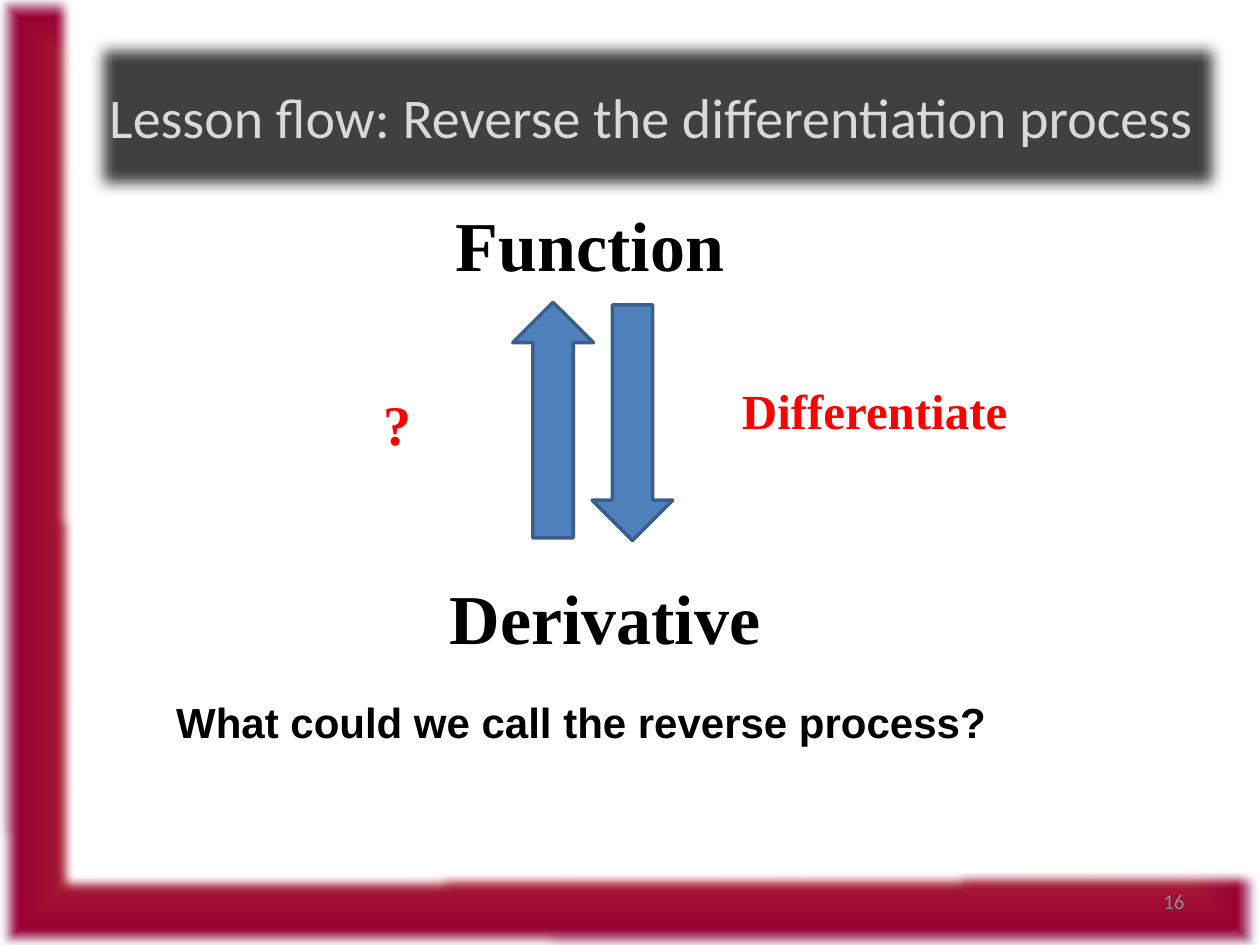
from dataclasses import dataclass

import pptx
import pptx.dml.color
import pptx.enum.shapes
import pptx.enum.text
import pptx.oxml
import pptx.oxml.ns
import pptx.util
from pptx.util import Inches, Pt

MSO_SHAPE = pptx.enum.shapes.MSO_SHAPE
ALIGN = pptx.enum.text.PP_ALIGN
ANCHOR = pptx.enum.text.MSO_ANCHOR
AUTO_SIZE = pptx.enum.text.MSO_AUTO_SIZE
NS = pptx.oxml.ns.nsdecls("a")
SERIF = "Times New Roman"


@dataclass
class Label:
    text: str
    left: float
    top: float
    width: float
    height: float
    size: float
    font: str = SERIF
    color: str = "000000"
    bold: bool = True
    align: ALIGN = ALIGN.LEFT
    inset: float = 0.1


@dataclass
class Arrow:
    kind: MSO_SHAPE
    left: float
    top: float


LABELS = [
    Label("16", 7.17, 6.95, 2.33, 0.4, 12, "Calibri", "8C8C8C", False, ALIGN.RIGHT),
    Label("Function", 3.52, 1.55, 2.37, 0.77, 40),
    Label("Derivative", 3.47, 4.51, 3.09, 0.77, 40),
    Label("Differentiate", 5.79, 2.97, 3.05, 0.57, 28, color="FF0000"),
    Label("What could we call the reverse process?", 1.3, 5.48, 8.27, 0.5, 24, "Arial"),
    Label("?", 2.56, 3.04, 0.98, 0.64, 32, color="FF0000", inset=0.48),
]
ARROWS = [
    Arrow(MSO_SHAPE.DOWN_ARROW, 4.7, 2.42),
    Arrow(MSO_SHAPE.UP_ARROW, 4.07, 2.4),
]
FRAME = [(-0.03, -0.04), (0.57, -0.04), (0.59, 6.96),
         (10.01, 6.92), (10.01, 7.56), (-0.01, 7.53)]
FRAME_STOPS = [(19, "FDCC33"), (95, "990033"), (100, "E1E8F5")]


def rgb(color: str) -> pptx.dml.color.RGBColor:
    return pptx.dml.color.RGBColor.from_string(color)


def style(p, size: float, font: str, color: str, bold: bool, align: ALIGN) -> None:
    p.alignment = align
    p.font.size = Pt(size)
    p.font.name = font
    p.font.bold = bold
    p.font.color.rgb = rgb(color)


def soften_edges(sp, radius: float) -> None:
    """Replace the shape's effects with a soft edge of the given radius in inches."""
    spPr = sp._element.spPr
    for old in spPr.findall(pptx.oxml.ns.qn("a:effectLst")):
        spPr.remove(old)
    spPr.append(pptx.oxml.parse_xml(
        f'<a:effectLst {NS}><a:softEdge rad="{Inches(radius)}"/></a:effectLst>'))


def add_frame(slide) -> None:
    """Draw the L-shaped border along the left and bottom, behind everything."""
    start, *rest = [(Inches(x), Inches(y)) for x, y in FRAME]
    builder = slide.shapes.build_freeform(*start)
    builder.add_line_segments(rest, close=True)
    sp = builder.convert_to_shape()
    sp.line.fill.background()
    stops = "".join(f'<a:gs pos="{pos * 1000}"><a:srgbClr val="{color}"/></a:gs>'
                    for pos, color in FRAME_STOPS)
    gradient = pptx.oxml.parse_xml(
        f'<a:gradFill {NS} rotWithShape="1"><a:gsLst>{stops}</a:gsLst>'
        '<a:path path="shape"><a:fillToRect l="50000" t="50000" r="50000" b="50000"/>'
        '</a:path></a:gradFill>')
    sp._element.spPr.find(pptx.oxml.ns.qn("a:custGeom")).addnext(gradient)
    soften_edges(sp, 0.07)
    slide.shapes._spTree.insert(2, sp._element)


def format_title(title) -> None:
    title.left, title.top = Inches(0.72), Inches(0.3)
    title.width, title.height = Inches(9), Inches(1.25)
    title.fill.solid()
    title.fill.fore_color.rgb = rgb("404040")
    soften_edges(title, 0.12)
    tf = title.text_frame
    tf.text = "Lesson flow: Reverse the differentiation process"
    tf.vertical_anchor = ANCHOR.MIDDLE
    tf.margin_right = Inches(0.2)
    style(tf.paragraphs[0], 32, "Calibri", "D9D9D9", False, ALIGN.CENTER)


def add_label(slide, label: Label) -> None:
    box = slide.shapes.add_textbox(Inches(label.left), Inches(label.top),
                                   Inches(label.width), Inches(label.height))
    tf = box.text_frame
    tf.word_wrap = True
    tf.auto_size = AUTO_SIZE.NONE
    tf.vertical_anchor = ANCHOR.MIDDLE
    tf.margin_left = Inches(label.inset)
    tf.text = label.text
    style(tf.paragraphs[0], label.size, label.font, label.color, label.bold, label.align)


def add_arrow(slide, arrow: Arrow) -> None:
    sp = slide.shapes.add_shape(arrow.kind, Inches(arrow.left), Inches(arrow.top),
                                Inches(0.64), Inches(1.87))
    sp.shadow.inherit = False
    sp.fill.solid()
    sp.fill.fore_color.rgb = rgb("4F81BD")
    sp.line.color.rgb = rgb("3A5F8C")
    sp.line.width = Pt(2)


def main() -> None:
    prs = pptx.Presentation()
    prs.slide_width, prs.slide_height = Inches(10), Inches(7.5)
    slide = prs.slides.add_slide(prs.slide_layouts[5])
    add_frame(slide)
    format_title(slide.shapes.title)
    for label in LABELS:
        add_label(slide, label)
    for arrow in ARROWS:
        add_arrow(slide, arrow)
    prs.save("out.pptx")


if __name__ == "__main__":
    main()
